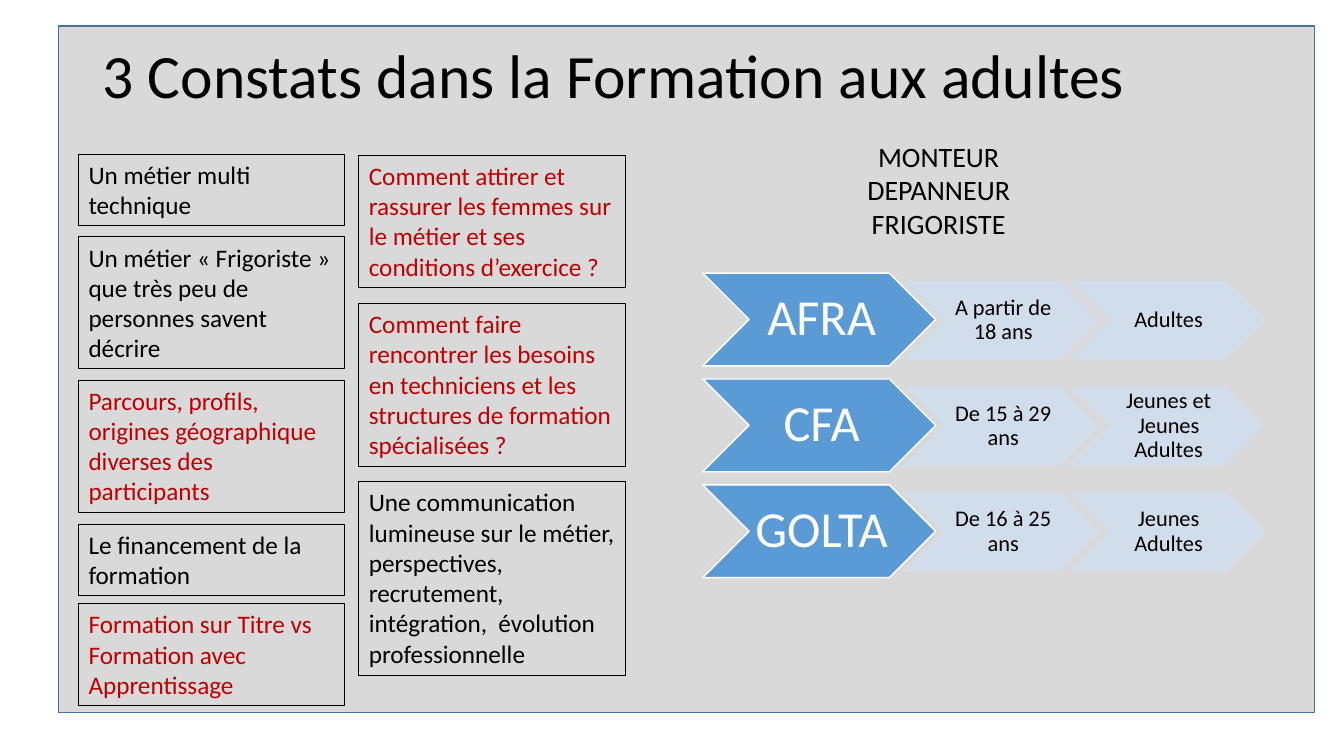
import pptx
import pptx.util
import pptx.dml.color
import pptx.enum.shapes
import pptx.enum.text
import pptx.oxml
import pptx.oxml.ns

PX = 9144  # EMU per px, 100 px to the inch
FONT = "Calibri"
COLORS = {
    "panel": "D9D9D9", "panel_line": "43739E", "black": "000000", "red": "C00000",
    "blue": "5B9BD5", "pale": "D2DEEF", "white": "FFFFFF",
}
SHAPE = pptx.enum.shapes.MSO_SHAPE
ALIGN = pptx.enum.text.PP_ALIGN
ANCHOR = pptx.enum.text.MSO_ANCHOR

LEFT_NOTES = [  # top, height, colour, text
    (153, 71, "black", "Un métier multi technique"),
    (235, 131, "black", "Un métier « Frigoriste » que très peu de personnes savent décrire"),
    (377, 131, "red", "Parcours, profils, origines géographique diverses des participants"),
    (520, 71, "black", "Le financement de la formation"),
    (599, 101, "red", "Formation sur Titre vs Formation avec Apprentissage"),
]
RIGHT_NOTES = [
    (154, 131, "red", "Comment attirer et rassurer les femmes sur le métier et ses conditions d’exercice ?"),
    (301, 162, "red", "Comment faire rencontrer les besoins en techniciens et les structures "
                      "de formation spécialisées ?"),
    (478, 192, "black", "Une communication lumineuse sur le métier, perspectives, recrutement, "
                        "intégration,  évolution professionnelle"),
]
CENTRES = [
    ("AFRA", "A partir de 18 ans", "Adultes"),
    ("CFA", "De 15 à 29 ans", "Jeunes et Jeunes Adultes"),
    ("GOLTA", "De 16 à 25 ans", "Jeunes Adultes"),
]


def emu(*lengths):
    return [pptx.util.Emu(n * PX) for n in lengths]


def rgb(name):
    return pptx.dml.color.RGBColor.from_string(COLORS[name])


def write(s, text, size=18, color="black", align=ALIGN.LEFT, anchor=ANCHOR.TOP,
          spacing=None, insets=(10, 5, 10, 5)):
    tf = s.text_frame
    tf.word_wrap = True
    tf.vertical_anchor = anchor
    tf.margin_left, tf.margin_top, tf.margin_right, tf.margin_bottom = emu(*insets)
    p = tf.paragraphs[0]
    p.alignment = align
    if spacing:
        p.line_spacing = spacing
    r = p.add_run()
    r.text = text
    r.font.name = FONT
    r.font.size = pptx.util.Pt(size)
    r.font.color.rgb = rgb(color)


def add_shape(slide, kind, box, fill=None, line="black", width=1):
    s = slide.shapes.add_shape(kind, *emu(*box))
    s.shadow.inherit = False
    if fill:
        s.fill.solid()
        s.fill.fore_color.rgb = rgb(fill)
    else:
        s.fill.background()
    s.line.color.rgb = rgb(line)
    s.line.width = pptx.util.Pt(width)
    return s


def set_opacity(s, percent):
    for color in s._element.spPr.iter(pptx.oxml.ns.qn("a:srgbClr")):
        alpha = pptx.oxml.parse_xml(
            f'<a:alpha {pptx.oxml.ns.nsdecls("a")} val="{percent * 1000}"/>')
        color.append(alpha)


def add_text(slide, box, text, **fmt):
    write(slide.shapes.add_textbox(*emu(*box)), text, **fmt)


def add_notes(slide, left, width, notes):
    for top, height, color, text in notes:
        s = add_shape(slide, SHAPE.RECTANGLE, (left, top, width, height), width=0.75)
        write(s, text, color=color)


def add_centres(slide, left, top):
    row_pitch, step_pitch = 105, 164
    centered = dict(align=ALIGN.CENTER, anchor=ANCHOR.MIDDLE, spacing=0.9)
    for row, (name, *steps) in enumerate(CENTRES):
        y = top + row * row_pitch
        s = add_shape(slide, SHAPE.CHEVRON, (left, y, 231, 92), "blue", "white")
        write(s, name, size=36, color="white", insets=(5, 3, 0, 3), **centered)
        for col, text in enumerate(steps):
            box = (left + 201 + col * step_pitch, y + 8, 192, 77)
            s = add_shape(slide, SHAPE.CHEVRON, box, "pale", "pale")
            set_opacity(s, 90)
            write(s, text, size=16, insets=(2, 1, 0, 1), **centered)


def build_slide(prs):
    slide = prs.slides.add_slide(prs.slide_layouts[6])
    # Background panel and title
    add_shape(slide, SHAPE.RECTANGLE, (58, 26, 1246, 681), "panel", "panel_line")
    add_text(slide, (92, 40, 1150, 145), "3 Constats dans la Formation aux adultes",
             size=44, spacing=0.9)
    # Two columns of findings
    add_notes(slide, 78, 264, LEFT_NOTES)
    add_notes(slide, 356, 264, RIGHT_NOTES)
    # Training centres and their public
    add_text(slide, (799, 133, 264, 111), "MONTEUR DEPANNEUR FRIGORISTE",
             size=20, align=ALIGN.CENTER)
    add_centres(slide, 697, 271)


def main():
    prs = pptx.Presentation()
    prs.slide_width, prs.slide_height = emu(1333, 750)
    build_slide(prs)
    prs.save("out.pptx")


if __name__ == "__main__":
    main()
